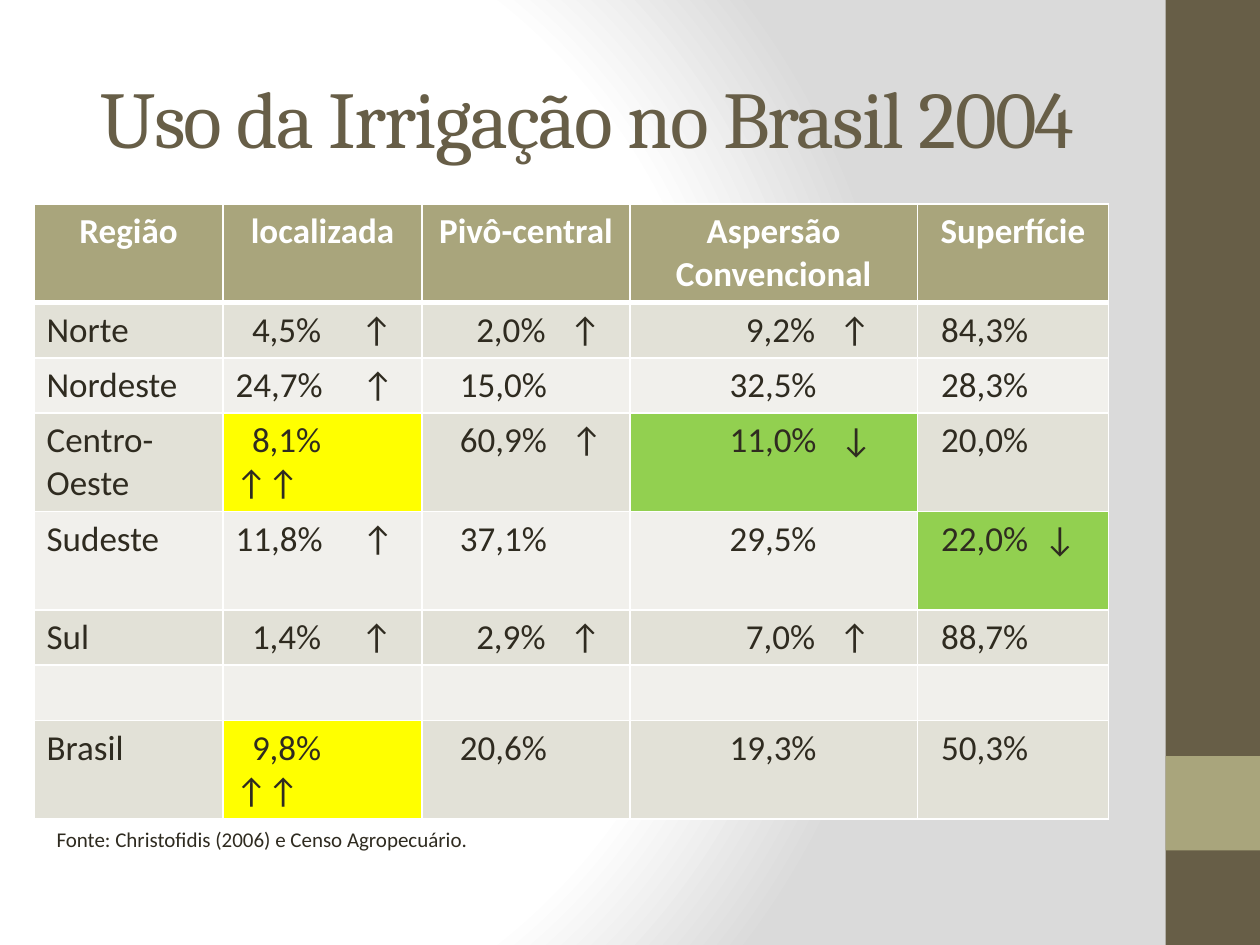
from pptx import Presentation
from pptx.dml.color import RGBColor
from pptx.enum.shapes import MSO_SHAPE as Shape
from pptx.enum.text import MSO_ANCHOR as Anchor, MSO_AUTO_SIZE as AutoSize, PP_ALIGN as Align
from pptx.oxml import parse_xml
from pptx.oxml.ns import nsdecls, qn
from pptx.util import Inches, Pt

COLORS = {
    "brown": "675E47", "olive": "A9A57C", "ink": "2F2B20", "white": "FFFFFF",
    "gray": "DADADA", "dark band": "E2E1D7", "light band": "F1F0EC",
    "yellow": "FFFF00", "green": "92D050",
}
HEADERS = ["Região", "localizada", "Pivô-central", "Aspersão Convencional", "Superfície"]
# The space before an arrow is widened by column; \v breaks the line.
ROWS = [
    ["Norte", "4,5% ↑", "2,0% ↑", "9,2% ↑", "84,3%"],
    ["Nordeste", "24,7% ↑", "15,0%", "32,5%", "28,3%"],
    ["Centro-Oeste", "8,1%\v↑↑", "60,9% ↑", "11,0% ↓", "20,0%"],
    ["Sudeste", "11,8% ↑", "37,1%", "29,5%", "22,0% ↓"],
    ["Sul", "1,4% ↑", "2,9% ↑", "7,0% ↑", "88,7%"],
    [""] * 5,
    ["Brasil", "9,8%\v↑↑", "20,6%", "19,3%", "50,3%"],
]
COLUMN_WIDTHS = [1.5, 1.58, 1.65, 2.28, 1.52]
ONE_LINE, TWO_LINES = 0.44, 0.78
ROW_HEIGHTS = [TWO_LINES, ONE_LINE, ONE_LINE, TWO_LINES, TWO_LINES,
               ONE_LINE, ONE_LINE, TWO_LINES]
INDENTS = [0, 0, 0.2, 0.69, 0.09]
ARROW_GAPS = [0, 18, 9, 9, 4.5]  # points added to the space before an arrow
DIGIT_WIDTH = 0.13
HIGHLIGHTS = {(3, 1): "yellow", (7, 1): "yellow", (3, 3): "green", (4, 4): "green"}


def rgb(color):
    return RGBColor.from_string(COLORS[color])


def style_font(paragraph, size, color, name="Calibri", bold=False):
    for run in paragraph.runs:
        run.font.size = Pt(size)
        run.font.name = name
        run.font.bold = bold
        run.font.color.rgb = rgb(color)


def set_spacing(run, points):
    """Set the character spacing of a run."""
    run.font._element.set("spc", str(round(points * 100)))


def set_background(slide):
    """Radial gradient from white to gray."""
    slide.background.fill.gradient()
    gradient = slide.background._cSld.find(".//" + qn("a:gradFill"))
    stops = "".join(
        f'<a:gs pos="{position * 1000}"><a:srgbClr val="{COLORS[color]}"/></a:gs>'
        for position, color in [(0, "white"), (75, "white"), (100, "gray")])
    gradient.getparent().replace(gradient, parse_xml(
        f'<a:gradFill {nsdecls("a")} rotWithShape="1"><a:gsLst>{stops}</a:gsLst>'
        '<a:path path="circle"><a:fillToRect l="20000" t="50000" r="100000" b="50000"/>'
        '</a:path></a:gradFill>'))


def add_block(slide, top, height, color):
    shape = slide.shapes.add_shape(
        Shape.RECTANGLE, Inches(9.25), Inches(top), Inches(0.75), Inches(height))
    shape.shadow.inherit = False
    shape.fill.solid()
    shape.fill.fore_color.rgb = rgb(color)
    shape.line.fill.background()


def add_text(slide, text, left, top, width, height):
    shape = slide.shapes.add_textbox(Inches(left), Inches(top), Inches(width), Inches(height))
    shape.text_frame.text = text
    return shape.text_frame


def add_title(slide):
    frame = add_text(slide, "Uso da Irrigação no Brasil 2004", 0.5, 0.3, 8.33, 1.25)
    frame.word_wrap = True
    frame.vertical_anchor = Anchor.MIDDLE
    paragraph = frame.paragraphs[0]
    paragraph.alignment = Align.CENTER
    style_font(paragraph, 46, "brown", "Cambria")
    set_spacing(paragraph.runs[0], -1)


def add_source(slide):
    frame = add_text(slide, "Fonte: Christofidis (2006) e Censo Agropecuário.",
                     0.35, 6.51, 3.52, 0.3)
    frame.word_wrap = False
    frame.auto_size = AutoSize.SHAPE_TO_FIT_TEXT
    style_font(frame.paragraphs[0], 12, "ink")


def set_borders(cell, row):
    """White lines, thick between the header and the body."""
    properties = cell._tc.get_or_add_tcPr()
    thick_side = {0: "lnB", 1: "lnT"}.get(row)
    for index, side in enumerate(["lnL", "lnR", "lnT", "lnB"]):
        width = Pt(3 if side == thick_side else 1)
        properties.insert(index, parse_xml(
            f'<a:{side} {nsdecls("a")} w="{width}"><a:solidFill>'
            f'<a:srgbClr val="{COLORS["white"]}"/></a:solidFill></a:{side}>'))


def write_value(paragraph, column, text):
    """Write a value and its arrow; a one-digit value starts one digit further in."""
    value, space, arrow = text.partition(" ")
    paragraph.text = value
    if arrow:
        gap = paragraph.add_run()
        gap.text = space
        set_spacing(gap, ARROW_GAPS[column])
        paragraph.add_run().text = arrow
    properties = paragraph._p.get_or_add_pPr()
    properties.set("marL", str(Inches(INDENTS[column])))
    properties.set("indent", str(Inches(DIGIT_WIDTH if text[1:2] == "," else 0)))


def fill_cell(cell, row, column, text):
    band = "olive" if row == 0 else "dark band" if row % 2 else "light band"
    cell.fill.solid()
    cell.fill.fore_color.rgb = rgb(HIGHLIGHTS.get((row, column), band))
    set_borders(cell, row)
    paragraph = cell.text_frame.paragraphs[0]
    if row == 0:
        paragraph.text = text
        paragraph.alignment = Align.CENTER
        style_font(paragraph, 20, "white", bold=True)
    elif text:
        write_value(paragraph, column, text)
        style_font(paragraph, 20, "ink")


def add_irrigation_table(slide):
    contents = [HEADERS] + ROWS
    table = slide.shapes.add_table(
        len(contents), len(HEADERS), Inches(0.27), Inches(1.62),
        Inches(sum(COLUMN_WIDTHS)), Inches(sum(ROW_HEIGHTS))).table
    for column, width in zip(table.columns, COLUMN_WIDTHS):
        column.width = Inches(width)
    for row, height in zip(table.rows, ROW_HEIGHTS):
        row.height = Inches(height)
    for row, texts in enumerate(contents):
        for column, text in enumerate(texts):
            fill_cell(table.cell(row, column), row, column, text)


def main():
    presentation = Presentation()
    presentation.slide_width, presentation.slide_height = Inches(10), Inches(7.5)
    slide = presentation.slides.add_slide(presentation.slide_layouts[6])
    set_background(slide)
    add_block(slide, 0, 7.5, "brown")
    add_block(slide, 6, 0.75, "olive")
    add_title(slide)
    add_irrigation_table(slide)
    add_source(slide)
    presentation.save("out.pptx")


if __name__ == "__main__":
    main()
